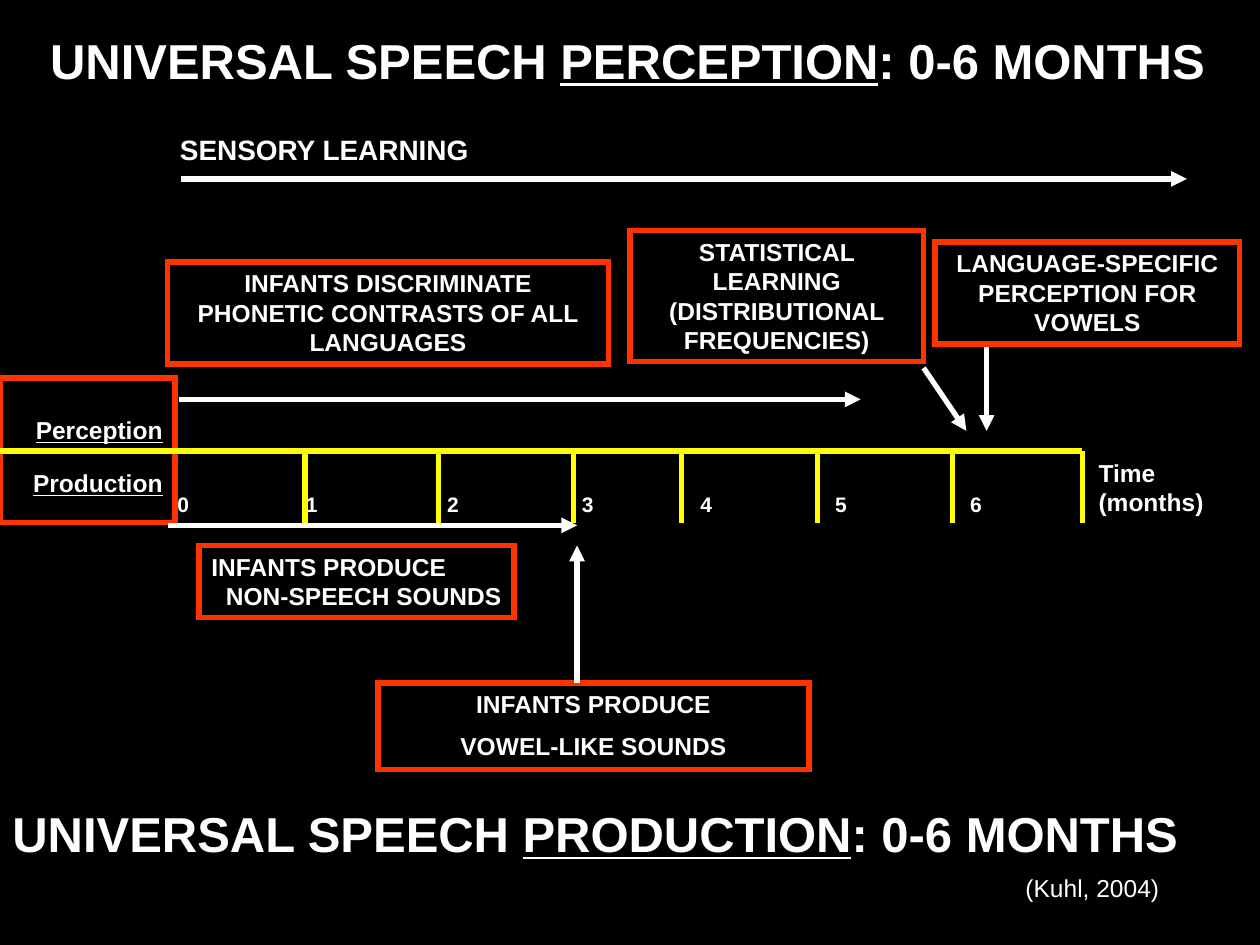
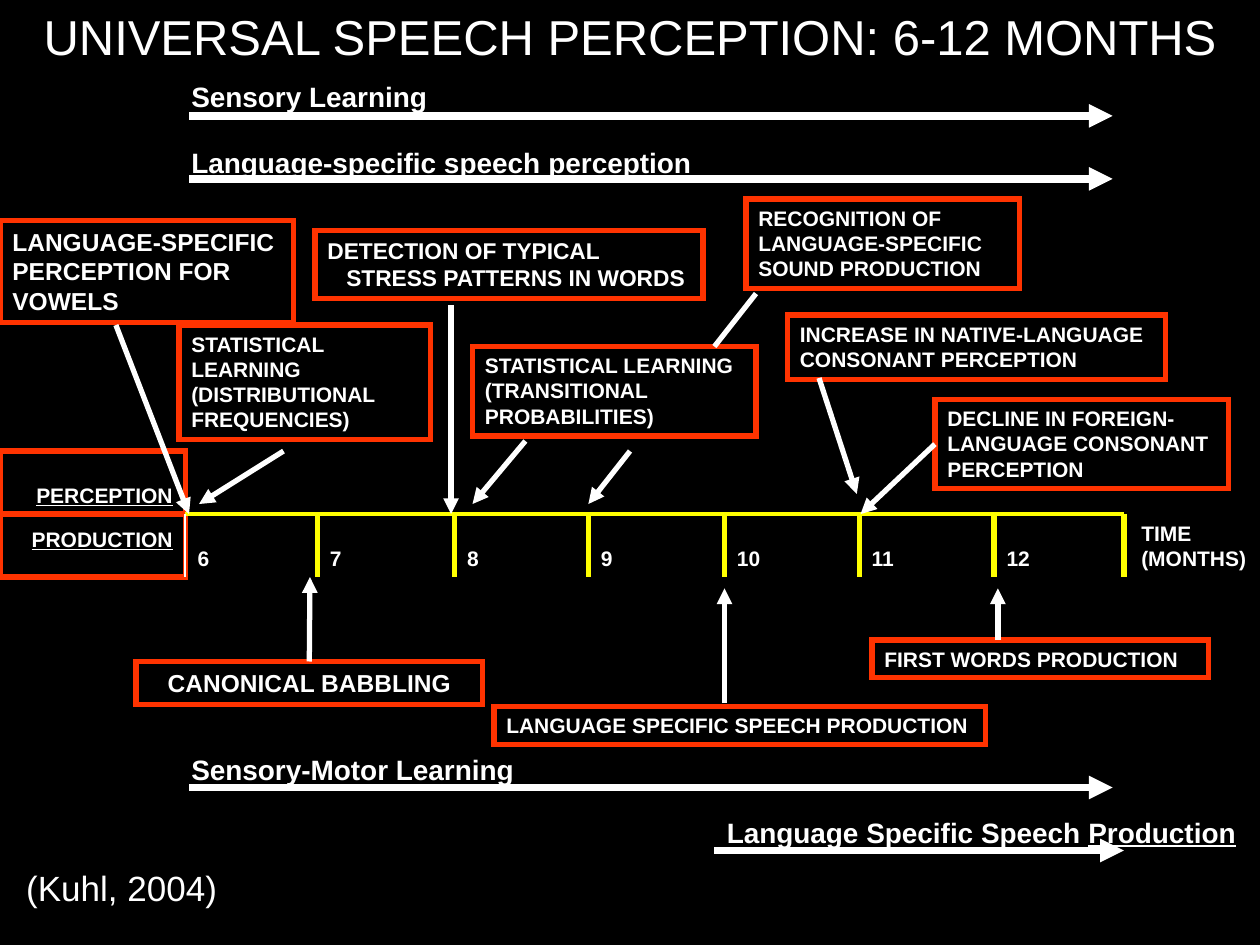
from dataclasses import dataclass

from lxml import etree
from pptx import Presentation
from pptx.dml.color import RGBColor
from pptx.enum.shapes import MSO_CONNECTOR, MSO_SHAPE
from pptx.enum.text import MSO_ANCHOR, PP_ALIGN
from pptx.oxml.ns import qn
from pptx.util import Inches, Pt

LEFT, CENTER, RIGHT = PP_ALIGN.LEFT, PP_ALIGN.CENTER, PP_ALIGN.RIGHT
TOP, BOTTOM = MSO_ANCHOR.TOP, MSO_ANCHOR.BOTTOM
STRAIGHT, RECTANGLE = MSO_CONNECTOR.STRAIGHT, MSO_SHAPE.RECTANGLE
JOIN_TOP, JOIN_LEFT = 0, 1


@dataclass(frozen=True)
class Theme:
    font: str = "Arial"
    background: RGBColor = RGBColor(0, 0, 0)
    text: RGBColor = RGBColor(255, 255, 255)
    frame: RGBColor = RGBColor(0xFF, 0x33, 0x00)
    axis: RGBColor = RGBColor(0xFF, 0xFF, 0x00)
    title: int = 28
    source: int = 20
    heading: int = 16
    body: int = 14
    medium: int = 13
    small: int = 12
    line: float = 3
    heavy_line: float = 4.5


THEME = Theme()


# Basic parts
def write(shape, text, size=THEME.body, bold=True, align=LEFT, anchor=TOP,
          indent=0, space=0, right=0.1, bottom=0.05):
    """Fill a shape; underscores enclose underlined words, newlines part paragraphs.

    align is one value, or one value for each paragraph; indent and space
    apply from the second paragraph on.
    """
    frame = shape.text_frame
    frame.word_wrap = True
    frame.vertical_anchor = anchor
    frame.margin_right, frame.margin_bottom = Inches(right), Inches(bottom)
    for number, line in enumerate(text.split("\n")):
        paragraph = frame.add_paragraph() if number else frame.paragraphs[0]
        paragraph.alignment = align[number] if isinstance(align, tuple) else align
        if number:
            paragraph.space_before = Pt(space)
            paragraph._p.get_or_add_pPr().set("marL", str(Inches(indent)))
        for position, piece in enumerate(line.split("_")):
            if piece:
                run = paragraph.add_run()
                run.text = piece
                run.font.name, run.font.size = THEME.font, Pt(size)
                run.font.bold, run.font.underline = bold, position % 2 == 1
                run.font.color.rgb = THEME.text


def add_text(slide, box, text, **style):
    write(slide.shapes.add_textbox(*map(Inches, box)), text, **style)


def add_frame(slide, box, text, **style):
    shape = slide.shapes.add_shape(RECTANGLE, *map(Inches, box))
    shape.shadow.inherit = False
    shape.fill.background()
    shape.line.color.rgb = THEME.frame
    shape.line.width = Pt(THEME.line)
    etree.SubElement(shape.line._get_or_add_ln(), qn("a:miter"), lim="800000")
    write(shape, text, **style)
    return shape


def add_line(slide, ends, color=THEME.text, width=THEME.line, arrow=False):
    line = slide.shapes.add_connector(STRAIGHT, *map(Inches, ends))
    line.line.color.rgb = color
    line.line.width = Pt(width)
    if arrow:
        etree.SubElement(line.line._get_or_add_ln(), qn("a:tailEnd"), type="triangle")
    etree.SubElement(line._element.spPr, qn("a:effectLst"))
    return line


# Regions
def add_callout(slide, box, text, arrow=None, stem=None, join=None, **style):
    """Framed note; arrow and plain stem run between offsets from its corner."""
    left, top = box[:2]
    frame = add_frame(slide, box, text, **style)
    for offsets, headed in ((arrow, True), (stem, False)):
        if offsets:
            x1, y1, x2, y2 = offsets
            line = add_line(slide, (left + x1, top + y1, left + x2, top + y2), arrow=headed)
            if headed and join is not None:
                line.begin_connect(frame, join)


def add_span(slide, box, text, dx, dy, length, width=THEME.heavy_line):
    """Heading above a long arrow."""
    x, y = box[0] + dx, box[1] + dy
    add_line(slide, (x, y, x + length, y), width=width, arrow=True)
    add_text(slide, box, text, size=THEME.heading)


def add_timeline(slide, box, rows, row_size, head_width, axis_top, ticks,
                 months, month_lefts, unit, unit_left, axis_left, axis_width):
    """Perception row above the axis, production row with months below it."""
    left, top, width, height = box
    axis, below = top + axis_top, height - axis_top

    # Month labels and unit
    for month, month_left in zip(months, month_lefts):
        add_text(slide, (left + month_left, axis, 1.05, below), str(month),
                 size=THEME.small, anchor=BOTTOM)
    add_text(slide, (left + unit_left, axis, width - unit_left, below), unit,
             size=row_size, anchor=BOTTOM, right=0.05)

    # Row heads
    perception, production = rows
    head = dict(size=row_size, align=RIGHT, anchor=BOTTOM)
    add_frame(slide, (left, axis, head_width, below), production, bottom=0.2, **head)
    add_frame(slide, (left, top, head_width, axis_top), perception, **head)

    # Axis and ticks
    add_line(slide, (left + axis_left, axis, left + ticks[-1], axis), THEME.axis, axis_width)
    for tick in ticks:
        add_line(slide, (left + tick, axis, left + tick, axis + below), THEME.axis)


def add_black_slide(presentation):
    slide = presentation.slides.add_slide(presentation.slide_layouts[6])
    slide.background.fill.solid()
    slide.background.fill.fore_color.rgb = THEME.background
    return slide


# Slides
def build_first_half_year(presentation):
    slide = add_black_slide(presentation)
    add_text(slide, (0.21, 0.19, 9.54, 0.57),
             "UNIVERSAL SPEECH _PERCEPTION_: 0-6 MONTHS", size=THEME.title, align=CENTER)
    add_timeline(
        slide, (0, 3, 10, 1.15), ("_Perception_", "_Production_"), THEME.body,
        head_width=1.39, axis_top=0.58,
        ticks=(2.42, 3.48, 4.55, 5.41, 6.49, 7.56, 8.59), months=range(7),
        month_lefts=(1.31, 2.33, 3.45, 4.52, 5.46, 6.53, 7.6),
        unit="Time (months)", unit_left=8.62, axis_left=0, axis_width=THEME.line)
    add_span(slide, (1.33, 1, 3.11, 0.37), "SENSORY LEARNING",
             dx=0.11, dy=0.42, length=7.98, width=THEME.line)

    # Production notes
    add_callout(slide, (3, 5.42, 3.42, 0.69), "INFANTS PRODUCE\nVOWEL-LIKE SOUNDS",
                arrow=(1.58, 0, 1.58, -1.09), align=CENTER, space=7)
    add_callout(slide, (1.58, 4.33, 2.5, 0.57), "INFANTS PRODUCE\nNON-SPEECH SOUNDS",
                arrow=(-0.25, -0.16, 3, -0.16), align=(LEFT, RIGHT))

    # Perception notes
    perception_notes = (
        ((1.33, 2.08, 3.5, 0.81), "INFANTS DISCRIMINATE PHONETIC CONTRASTS OF ALL LANGUAGES",
         (0.09, 1.09, 5.5, 1.09)),
        ((5, 1.83, 2.33, 1.04), "STATISTICAL LEARNING (DISTRIBUTIONAL FREQUENCIES)",
         (2.33, 1.09, 2.67, 1.59)),
        ((7.42, 1.92, 2.42, 0.81), "LANGUAGE-SPECIFIC PERCEPTION FOR VOWELS",
         (0.41, 0.83, 0.41, 1.5)),
    )
    for box, text, arrow in perception_notes:
        add_callout(slide, box, text, arrow, align=CENTER)

    # Lower title and source
    add_text(slide, (0, 6.33, 9.58, 0.57),
             "UNIVERSAL SPEECH _PRODUCTION_: 0-6 MONTHS", size=THEME.title)
    add_text(slide, (8.04, 6.88, 1.79, 0.34), "(Kuhl, 2004)", bold=False)


def build_second_half_year(presentation):
    slide = add_black_slide(presentation)
    add_text(slide, (0, 0, 10, 0.57), "UNIVERSAL SPEECH PERCEPTION: 6-12 MONTHS",
             size=THEME.title, bold=False, align=CENTER)
    head_width = 1.47
    ticks = (2.52, 3.61, 4.67, 5.75, 6.82, 7.89, 8.92)
    add_timeline(
        slide, (0, 3.58, 10, 1), ("_PERCEPTION_", "_PRODUCTION_"), THEME.small,
        head_width=head_width, axis_top=0.5, ticks=ticks, months=range(6, 13),
        month_lefts=(head_width, *ticks[:-1]),
        unit="TIME (MONTHS)", unit_left=8.96, axis_left=head_width, axis_width=2)
    add_line(slide, (head_width, 4.08, head_width, 4.58), width=1)

    # Learning spans
    spans = (
        ((1.42, 0.58, 2.5, 0.37), "Sensory Learning", 0.08, 0.34, 7.33),
        ((1.42, 1.11, 4.22, 0.37), "Language-specific speech _perception_", 0.08, 0.31, 7.33),
        ((1.42, 5.92, 3.5, 0.37), "Sensory-Motor Learning", 0.08, 0.33, 7.33),
        ((5.67, 6.42, 4.33, 0.37), "Language Specific Speech _Production_", 0, 0.33, 3.25),
    )
    for span in spans:
        add_span(slide, *span)

    # Notes in small type
    small_notes = (
        ((1.42, 2.58, 2, 0.91), "STATISTICAL LEARNING (DISTRIBUTIONAL FREQUENCIES)",
         (0.83, 1, 0.16, 1.42)),
        ((3.92, 5.61, 3.9, 0.3), "LANGUAGE SPECIFIC SPEECH PRODUCTION",
         (1.83, -0.03, 1.83, -0.94)),
        ((6.92, 5.08, 2.67, 0.3), "FIRST WORDS PRODUCTION", (1, 0, 1, -0.41)),
        ((6.25, 2.5, 3, 0.51), "INCREASE IN NATIVE-LANGUAGE CONSONANT PERCEPTION",
         (0.25, 0.5, 0.55, 1.42)),
        ((3.75, 2.75, 2.25, 0.71), "STATISTICAL LEARNING (TRANSITIONAL PROBABILITIES)",
         (0.42, 0.75, 0, 1.25)),
    )
    for box, text, arrow in small_notes:
        add_callout(slide, box, text, arrow, size=THEME.small)
    add_callout(slide, (7.42, 3.17, 2.33, 0.71),
                "DECLINE IN FOREIGN-LANGUAGE CONSONANT PERCEPTION",
                arrow=(0, 0.36, -0.59, 0.91), join=JOIN_LEFT, size=THEME.small)
    add_callout(slide, (5.92, 1.58, 2.17, 0.71),
                "RECOGNITION OF LANGUAGE-SPECIFIC SOUND PRODUCTION",
                arrow=(-0.92, 2, -1.25, 2.42), stem=(-0.25, 1.17, 0.08, 0.75),
                size=THEME.small)

    # Notes in larger type
    add_callout(slide, (1.08, 5.25, 2.75, 0.34), "CANONICAL BABBLING",
                arrow=(1.38, 0, 1.38, -0.67), join=JOIN_TOP, align=CENTER)
    add_callout(slide, (0, 1.75, 2.33, 0.81), "LANGUAGE-SPECIFIC PERCEPTION FOR VOWELS",
                arrow=(0.92, 0.83, 1.5, 2.33))
    add_callout(slide, (2.5, 1.83, 3.08, 0.54),
                "DETECTION OF TYPICAL\nSTRESS PATTERNS IN WORDS",
                arrow=(1.08, 0.59, 1.08, 2.25), size=THEME.medium, indent=0.15)

    # Source
    add_text(slide, (0.11, 6.83, 1.83, 0.44), "(Kuhl, 2004)",
             size=THEME.source, bold=False)


def main():
    presentation = Presentation()
    presentation.slide_width, presentation.slide_height = Inches(10), Inches(7.5)
    build_first_half_year(presentation)
    build_second_half_year(presentation)
    presentation.save("out.pptx")


if __name__ == "__main__":
    main()
